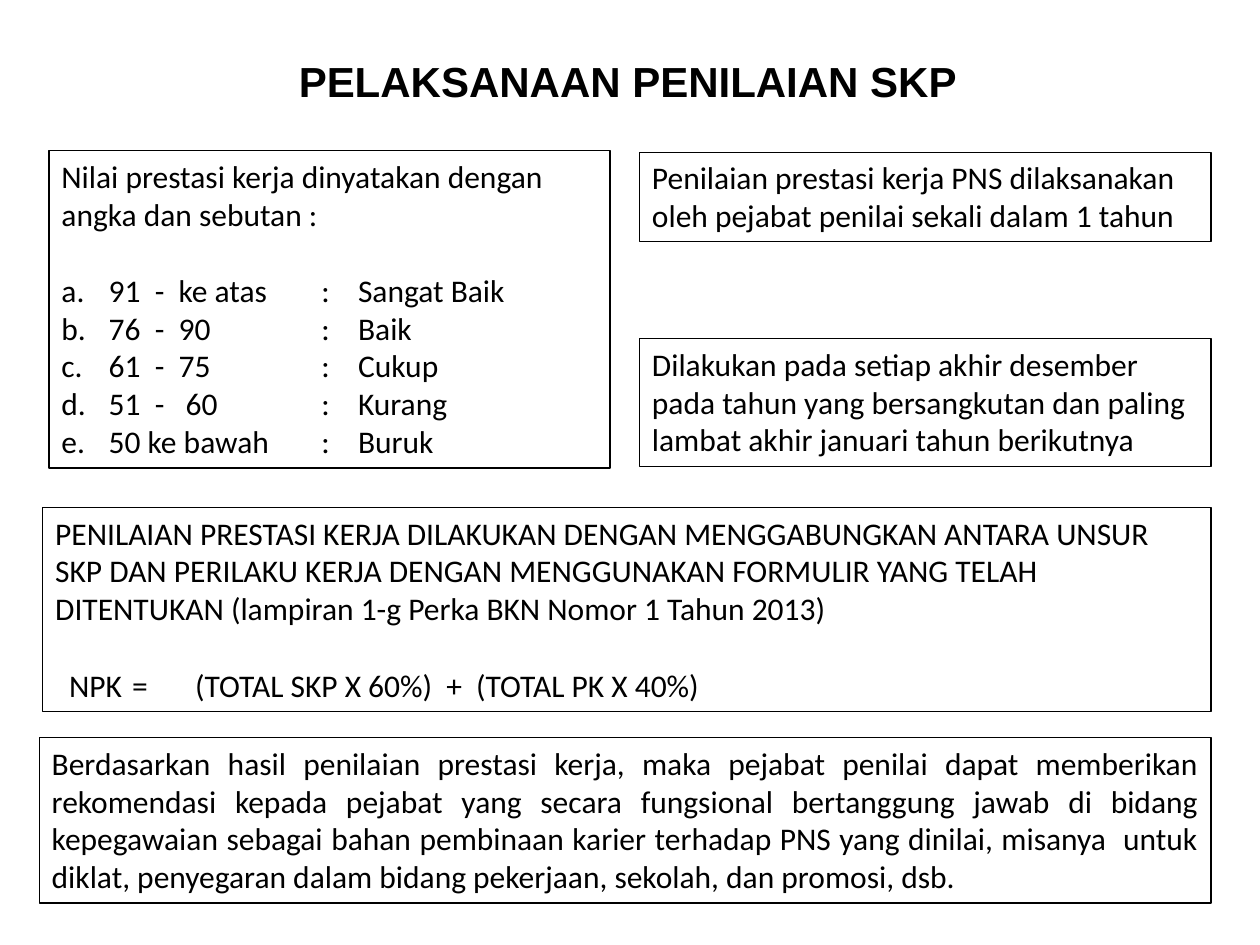
from lxml.etree import SubElement
from pptx import Presentation
from pptx.dml.color import RGBColor
from pptx.enum.shapes import MSO_SHAPE
from pptx.enum.text import MSO_ANCHOR, PP_ALIGN
from pptx.oxml.ns import qn
from pptx.util import Pt


def color(value):
    return RGBColor.from_string(value)


class Deck:
    font, size, ink = "Calibri", 18, "000000"
    blank_line = 22

    def __init__(self, width, height):
        self.prs = Presentation()
        self.prs.slide_width, self.prs.slide_height = Pt(width), Pt(height)
        self.s = self.prs.slides.add_slide(self.prs.slide_layouts[6])

    def run(self, p, text, font=None, size=None, bold=False):
        r = p.add_run()
        r.text = text
        r.font.name = font or self.font
        r.font.size = Pt(size or self.size)
        r.font.bold = bold
        r.font.color.rgb = color(self.ink)

    def title(self, x, y, w, h, text):
        tf = self.s.shapes.add_textbox(Pt(x), Pt(y), Pt(w), Pt(h)).text_frame
        tf.word_wrap = True
        p = tf.paragraphs[0]
        p.alignment = PP_ALIGN.CENTER
        self.run(p, text, "Arial", 24, True)

    def box(self, x, y, w, h, text, align=PP_ALIGN.LEFT):
        sp = self.s.shapes.add_shape(MSO_SHAPE.RECTANGLE, Pt(x), Pt(y), Pt(w), Pt(h))
        sp.shadow.inherit = False
        sp.fill.background()
        sp.line.color.rgb = color(self.ink)
        sp.line.width = Pt(0.75)
        tf = sp.text_frame
        tf.word_wrap = True
        tf.vertical_anchor = MSO_ANCHOR.TOP
        p = tf.paragraphs[0]
        p.alignment = align
        self.run(p, text)
        return tf

    def tabbed(self, tf, cells, stops, margin, indent=0, lettered=False, gap=False):
        p = tf.add_paragraph()
        p.alignment = PP_ALIGN.LEFT
        p.space_before = Pt(self.blank_line if gap else 0)
        pPr = p._p.get_or_add_pPr()
        pPr.set("marL", str(Pt(margin)))
        pPr.set("indent", str(Pt(indent)))
        if lettered:
            SubElement(pPr, qn("a:buFont"), typeface=self.font)
            SubElement(pPr, qn("a:buAutoNum"), type="alphaLcPeriod")
        tabs = SubElement(pPr, qn("a:tabLst"))
        for stop in stops:
            SubElement(tabs, qn("a:tab"), pos=str(Pt(stop)), algn="l")
        self.run(p, "\t".join(cells))


def main():
    deck = Deck(720, 540)

    # Rating scale
    tf = deck.box(28, 86, 320.5, 181.5,
                  "Nilai prestasi kerja dinyatakan dengan angka dan sebutan :")
    ratings = [
        ("91  -  ke atas", "Sangat Baik"),
        ("76  -  90", "Baik"),
        ("61  -  75", "Cukup"),
        ("51  -   60", "Kurang"),
        ("50 ke bawah", "Buruk"),
    ]
    for i, (score, label) in enumerate(ratings):
        deck.tabbed(tf, (score, ":", label), (148.5, 169.5), 27, -27,
                    lettered=True, gap=i == 0)

    # Schedule
    deck.box(365.5, 87, 326.5, 51,
             "Penilaian prestasi kerja PNS dilaksanakan oleh pejabat penilai "
             "sekali dalam 1 tahun")
    deck.box(365.5, 193.5, 326.5, 73,
             "Dilakukan pada setiap akhir desember pada tahun yang bersangkutan "
             "dan paling lambat akhir januari tahun berikutnya")

    # Formula
    tf = deck.box(24.5, 290, 667.5, 116.5,
                  "PENILAIAN PRESTASI KERJA DILAKUKAN DENGAN MENGGABUNGKAN ANTARA "
                  "UNSUR SKP DAN PERILAKU KERJA DENGAN MENGGUNAKAN FORMULIR YANG "
                  "TELAH DITENTUKAN (lampiran 1-g Perka BKN Nomor 1 Tahun 2013)")
    deck.tabbed(tf, ("NPK", "=", "(TOTAL SKP X 60%)  +  (TOTAL PK X 40%)"),
                (59, 80), 8, gap=True)

    # Recommendation
    deck.box(22.5, 421.5, 669.5, 94.5,
             "Berdasarkan hasil penilaian prestasi kerja, maka pejabat penilai dapat "
             "memberikan rekomendasi kepada pejabat yang secara fungsional "
             "bertanggung jawab di bidang kepegawaian sebagai bahan pembinaan karier "
             "terhadap PNS yang dinilai, misanya  untuk diklat, penyegaran dalam "
             "bidang pekerjaan, sekolah, dan promosi, dsb.", PP_ALIGN.JUSTIFY)

    # Title
    deck.title(161.5, 28, 394.5, 36, "PELAKSANAAN PENILAIAN SKP")

    deck.prs.save("out.pptx")


if __name__ == "__main__":
    main()
